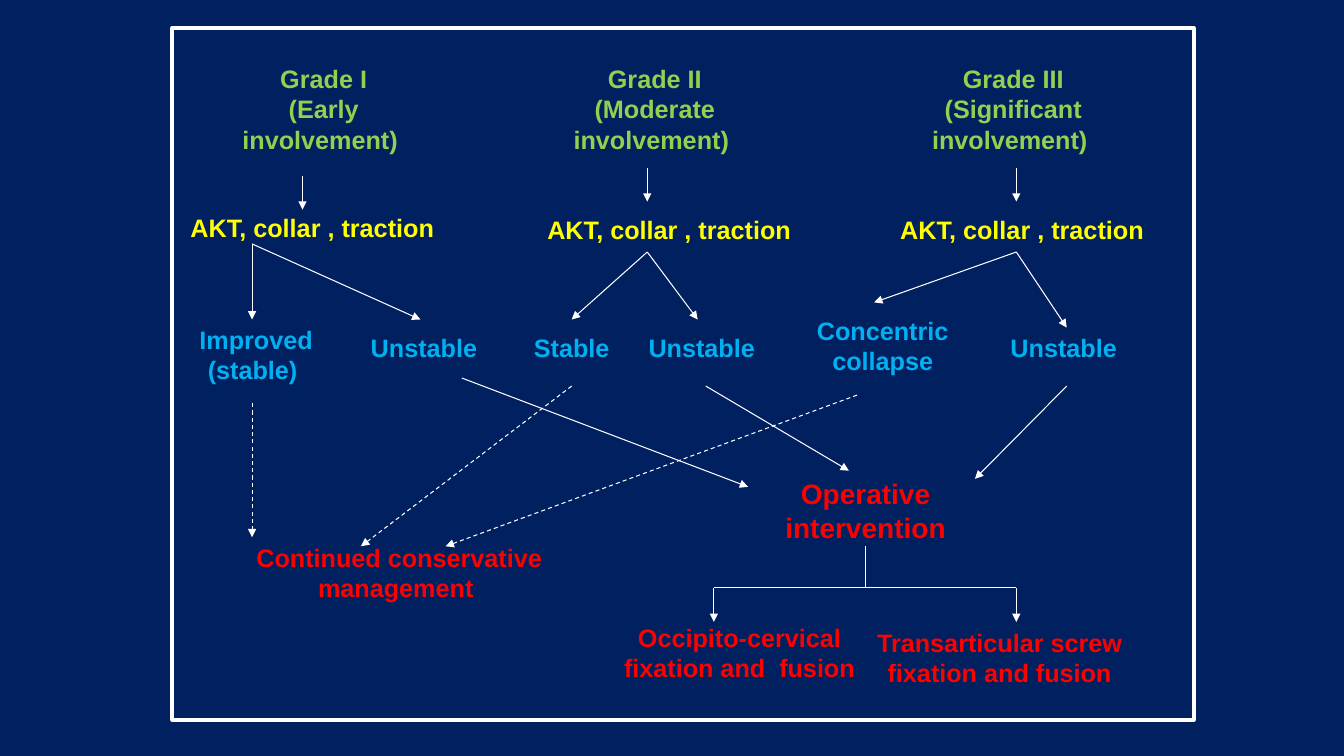
"""Build the slide that maps three grades of disease to their treatment."""
import dataclasses

import lxml.etree
import pptx
import pptx.dml.color
import pptx.enum.dml
import pptx.enum.shapes
import pptx.enum.text
import pptx.oxml.ns
import pptx.slide
import pptx.util

Inches = pptx.util.Inches
Align = pptx.enum.text.PP_ALIGN
HUES = {
    "back": "002060",
    "line": "FFFFFF",
    "grade": "92D050",
    "care": "FFFF00",
    "state": "00B0F0",
    "result": "FF0000",
}
FONT = {"name": "Arial", "bold": True}
FRAME = {"word_wrap": True, "auto_size": pptx.enum.text.MSO_AUTO_SIZE.SHAPE_TO_FIT_TEXT}


@dataclasses.dataclass(frozen=True)
class Label:
    """A text box with its place, colour key and type size."""

    text: str
    hue: str
    left: float
    top: float
    width: float
    height: float
    size: int = 18
    align: Align = Align.CENTER


@dataclasses.dataclass(frozen=True)
class Link:
    """A straight line between two points."""

    start: tuple[float, float]
    end: tuple[float, float]
    dash: bool = False
    head: bool = True


CARE = "AKT, collar , traction"
LABELS = [
    Label("Grade I\v(Early involvement) ", "grade", 2.25, 0.58, 1.92, 1.01),
    Label("Grade II (Moderate involvement) ", "grade", 5.58, 0.58, 1.83, 1.01),
    Label("Grade III (Significant involvement) ", "grade", 8.93, 0.58, 2.24, 1.01),
    Label(CARE, "care", 1.79, 2.06, 2.75, 0.4, align=Align.LEFT),
    Label(CARE, "care", 5.33, 2.08, 3.08, 0.4, align=Align.LEFT),
    Label(CARE, "care", 8.83, 2.08, 2.83, 0.4, align=Align.LEFT),
    Label("Improved (stable) ", "state", 1.85, 3.17, 1.38, 0.71),
    Label("Unstable ", "state", 3.56, 3.25, 1.36, 0.4),
    Label("Stable ", "state", 5.17, 3.25, 1, 0.4),
    Label("Unstable ", "state", 6.33, 3.25, 1.33, 0.4),
    Label("Concentric collapse", "state", 7.92, 3.08, 1.67, 0.71),
    Label("Unstable ", "state", 9.92, 3.25, 1.33, 0.4),
    Label("Continued conservative management ", "result", 2, 5.33, 3.92, 0.71),
    Label("Operative intervention", "result", 7.06, 4.68, 3.05, 0.77, size=20),
    Label("Occipito-cervical fixation and  fusion", "result", 5.92, 6.12, 2.83, 0.71),
    Label("Transarticular screw fixation and fusion", "result", 8.58, 6.17, 2.67, 0.71),
]

FIRST, SECOND, THIRD = (2.5, 2.42), (6.42, 2.5), (10.08, 2.5)
FORK_LEFT, FORK_RIGHT = (7.08, 5.83), (10.08, 5.83)
LINKS = [
    Link((3, 1.75), (3, 2.08)),
    Link((6.42, 1.67), (6.42, 2)),
    Link((10.08, 1.67), (10.08, 2)),
    Link(FIRST, (2.5, 3.17)),
    Link(FIRST, (4.17, 3.17)),
    Link(SECOND, (5.67, 3.17)),
    Link(SECOND, (6.92, 3.17)),
    Link(THIRD, (8.67, 3)),
    Link(THIRD, (10.58, 3.25)),
    Link((2.5, 4), (2.5, 5.33), dash=True),
    Link((5.67, 3.83), (3.58, 5.42), dash=True),
    Link((8.5, 3.92), (4.42, 5.42), dash=True),
    Link((4.58, 3.75), (7.42, 4.83)),
    Link((7, 3.83), (8.42, 4.67)),
    Link((10.58, 3.83), (9.67, 4.75)),
    Link((8.58, 5.42), (8.58, 5.83), head=False),
    Link(FORK_LEFT, FORK_RIGHT, head=False),
    Link(FORK_LEFT, (7.08, 6.17)),
    Link(FORK_RIGHT, (10.08, 6.17)),
]


def tint(key: str) -> pptx.dml.color.RGBColor:
    """Return the colour stored under a key."""
    return pptx.dml.color.RGBColor.from_string(HUES[key])


def apply(target: object, values: dict[str, object]) -> None:
    """Set each named value on the target."""
    for name, value in values.items():
        setattr(target, name, value)


def draw_label(slide: pptx.slide.Slide, label: Label) -> None:
    """Draw one text box."""
    place = map(Inches, (label.left, label.top, label.width, label.height))
    frame = slide.shapes.add_textbox(*place).text_frame
    apply(frame, FRAME)
    frame.text = label.text
    line = frame.paragraphs[0]
    line.alignment = label.align
    for run in line.runs:
        apply(run.font, FONT | {"size": pptx.util.Pt(label.size)})
        run.font.color.rgb = tint(label.hue)


def draw_link(slide: pptx.slide.Slide, link: Link) -> None:
    """Draw one line, with a dash and an arrowhead if asked."""
    kind = pptx.enum.shapes.MSO_CONNECTOR.STRAIGHT
    shape = slide.shapes.add_connector(kind, *map(Inches, link.start + link.end))
    shape.line.color.rgb = tint("line")
    shape.line.width = pptx.util.Pt(0.75)
    if link.dash:
        shape.line.dash_style = pptx.enum.dml.MSO_LINE.DASH
    tag = pptx.oxml.ns.qn
    props = shape.element.spPr
    if link.head:
        lxml.etree.SubElement(props.find(tag("a:ln")), tag("a:tailEnd"), type="triangle")
    lxml.etree.SubElement(props, tag("a:effectLst"))


def draw_border(slide: pptx.slide.Slide) -> None:
    """Draw the white border round the chart."""
    kind = pptx.enum.shapes.MSO_SHAPE.RECTANGLE
    border = slide.shapes.add_shape(kind, *map(Inches, (1.71, 0.28, 10.13, 6.86)))
    border.shadow.inherit = False
    border.fill.background()
    border.line.color.rgb = tint("line")
    border.line.width = pptx.util.Pt(3)


def main() -> None:
    """Build and save the slide."""
    deck = pptx.Presentation()
    apply(deck, {"slide_width": Inches(13.33), "slide_height": Inches(7.5)})
    slide = deck.slides.add_slide(deck.slide_layouts.get_by_name("Blank"))
    slide.background.fill.solid()
    slide.background.fill.fore_color.rgb = tint("back")
    for label in LABELS:
        draw_label(slide, label)
    for link in LINKS:
        draw_link(slide, link)
    draw_border(slide)
    deck.save("out.pptx")


if __name__ == "__main__":
    main()
